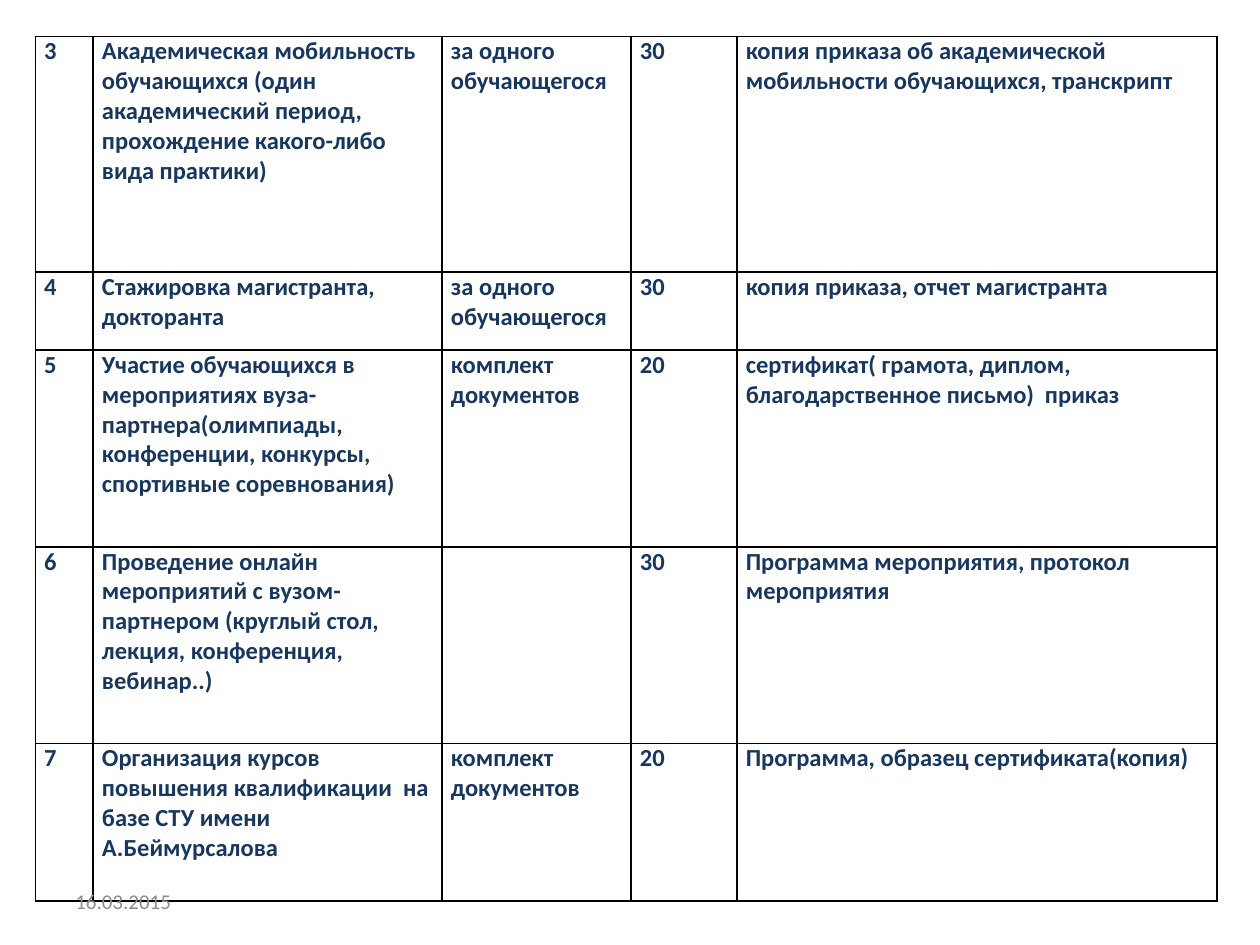
from lxml import etree
from pptx import Presentation
from pptx.dml.color import RGBColor
from pptx.enum.text import MSO_ANCHOR
from pptx.oxml.ns import qn
from pptx.util import Inches, Pt

MIDDLE = MSO_ANCHOR.MIDDLE
BLANK_LAYOUT = 6
COLORS = {"text": "17375E", "border": "000000", "date": "8C8C8C"}

COLUMN_WIDTHS = [0.46, 2.77, 1.5, 0.84, 3.81]
ROW_HEIGHTS = [1.87, 0.62, 1.56, 1.56, 1.25]
# Number, activity, unit, points, supporting documents
ACTIVITIES = [
    ("3", "Академическая мобильность обучающихся (один академический период, "
     "прохождение какого-либо вида практики)",
     "за одного обучающегося", "30",
     "копия приказа об академической мобильности обучающихся, транскрипт"),
    ("4", "Стажировка магистранта, докторанта",
     "за одного обучающегося", "30", "копия приказа, отчет магистранта"),
    ("5", "Участие обучающихся в мероприятиях вуза-партнера(олимпиады, "
     "конференции, конкурсы, спортивные соревнования)",
     "комплект документов", "20",
     "сертификат( грамота, диплом, благодарственное письмо)  приказ"),
    ("6", "Проведение онлайн мероприятий с вузом-партнером (круглый стол, "
     "лекция, конференция, вебинар..)",
     "", "30", "Программа мероприятия, протокол мероприятия"),
    ("7", "Организация курсов повышения квалификации  на базе СТУ имени "
     "А.Беймурсалова",
     "комплект документов", "20", "Программа, образец сертификата(копия)"),
]


class SlideBuilder:
    """Holds the text style and the slide being filled."""

    font_name = "Calibri"

    def __init__(self, slide):
        self.slide = slide

    def style(self, paragraph, size, color, bold=False):
        font = paragraph.font
        font.name = self.font_name
        font.size = Pt(size)
        font.bold = bold
        font.color.rgb = RGBColor.from_string(COLORS[color])

    def border(self, cell):
        properties = cell._tc.get_or_add_tcPr()
        for position, side in enumerate(("lnL", "lnR", "lnT", "lnB")):
            line = etree.Element(qn(f"a:{side}"), w=str(Pt(1)))
            fill = etree.SubElement(line, qn("a:solidFill"))
            etree.SubElement(fill, qn("a:srgbClr"), val=COLORS["border"])
            properties.insert(position, line)

    def cell(self, cell, text):
        cell.margin_left = cell.margin_right = Inches(0.07)
        cell.margin_top = cell.margin_bottom = 0
        cell.fill.background()
        self.border(cell)
        cell.text = text
        self.style(cell.text_frame.paragraphs[0], 14, "text", bold=True)

    def table(self, left, top, widths, heights, rows):
        table = self.slide.shapes.add_table(
            len(heights), len(widths), Inches(left), Inches(top),
            Inches(sum(widths)), Inches(sum(heights))).table
        table.first_row = table.horz_banding = False
        for column, width in zip(table.columns, widths):
            column.width = Inches(width)
        for row, height, texts in zip(table.rows, heights, rows):
            row.height = Inches(height)
            for cell, text in zip(row.cells, texts):
                self.cell(cell, text)

    def text(self, left, top, width, height, text, size, color):
        frame = self.slide.shapes.add_textbox(
            Inches(left), Inches(top), Inches(width), Inches(height)).text_frame
        frame.word_wrap = True
        frame.vertical_anchor = MIDDLE
        frame.text = text
        self.style(frame.paragraphs[0], size, color)


def main():
    deck = Presentation()
    deck.slide_width, deck.slide_height = Inches(10), Inches(7.5)
    builder = SlideBuilder(deck.slides.add_slide(deck.slide_layouts[BLANK_LAYOUT]))

    # Scoring table
    builder.table(0.28, 0.29, COLUMN_WIDTHS, ROW_HEIGHTS, ACTIVITIES)

    # Date in the footer
    builder.text(0.5, 6.95, 2.33, 0.4, "16.03.2015", 12, "date")

    deck.save("out.pptx")


if __name__ == "__main__":
    main()
